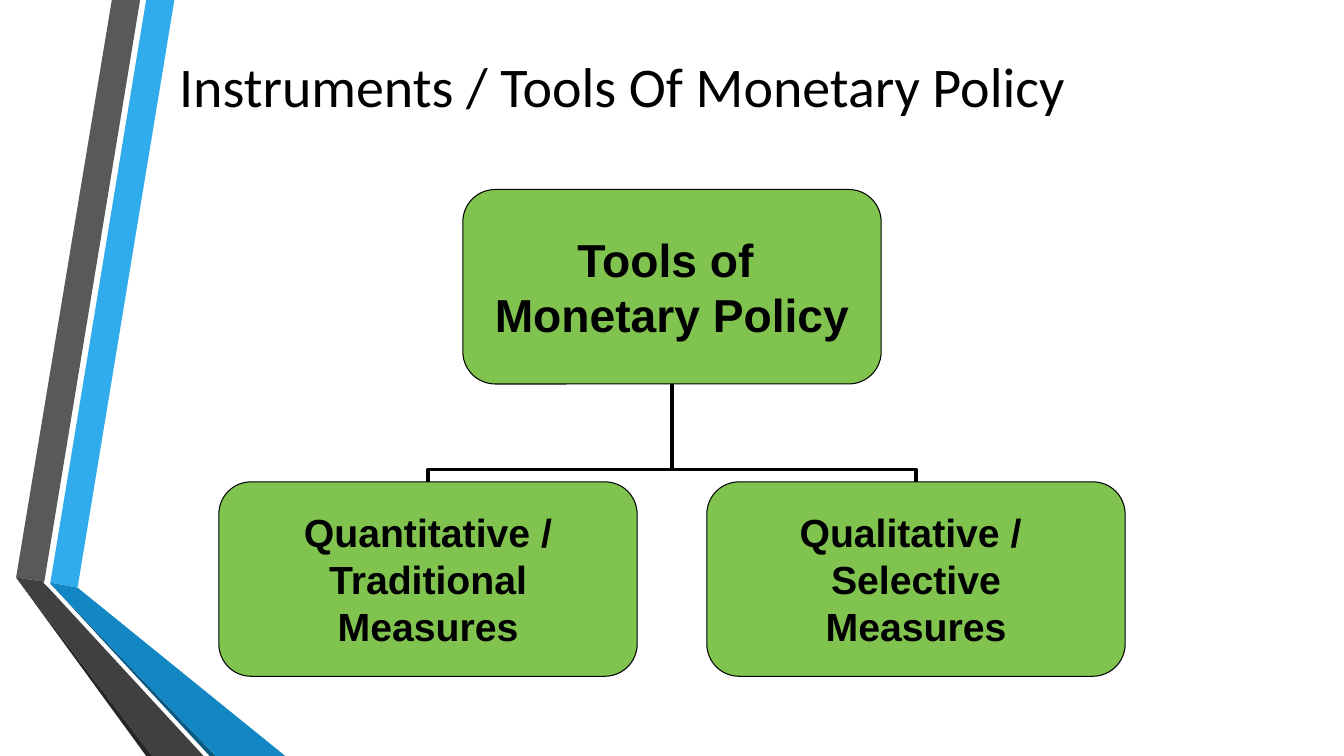
from pptx import Presentation
from pptx import util as u
from pptx.dml.color import RGBColor
from pptx.enum import shapes, text
from pptx.oxml.ns import qn
from lxml import etree

theme = {
    "ink": "000000", "box": "80C34F",
    "sky": "30ACEC", "blue": "1287C3", "navy": "0C5A82",
    "grey": "595959", "dark": "404040", "black": "262626",
    "title": 40, "root": 33, "leaf": 28,
    "head": "Calibri", "body": "Arial",
}


def paint(shape, color):
    shape.shadow.inherit = False
    shape.fill.solid()
    shape.fill.fore_color.rgb = RGBColor.from_string(theme[color])


def write(shape, lines, size, font, bold):
    frame = shape.text_frame
    frame.vertical_anchor = text.MSO_ANCHOR.MIDDLE
    frame.text = "\n".join(lines)
    for para in frame.paragraphs:
        para.alignment = text.PP_ALIGN.CENTER
        for run in para.runs:
            run.font.size = u.Pt(theme[size])
            run.font.name = theme[font]
            run.font.bold = bold
            run.font.color.rgb = RGBColor.from_string(theme["ink"])


deck = Presentation()
deck.slide_width, deck.slide_height = u.Inches(13.33), u.Inches(7.5)
slide = deck.slides.add_slide(deck.slide_layouts[6])
parts = slide.shapes

# Folded ribbons on the left, in hundredths of an inch
ribbons = [
    ("sky", [(50, 578), (77, 583), (173, 0), (145, 0)]),
    ("grey", [(139, 0), (111, 0), (16, 573), (44, 577)]),
    ("black", [(16, 573), (145, 750), (151, 750)]),
    ("navy", [(50, 579), (208, 750), (214, 750)]),
    ("blue", [(50, 579), (214, 750), (283, 750), (77, 583), (50, 578)]),
    ("dark", [(202, 750), (48, 583), (43, 578), (44, 577), (16, 573), (151, 750)]),
]
for color, points in ribbons:
    path = parts.build_freeform(*points[0], scale=u.Inches(0.01))
    path.add_line_segments(points[1:], close=True)
    ribbon = path.convert_to_shape()
    paint(ribbon, color)
    ribbon.line.fill.background()

# Title
title = parts.add_textbox(u.Inches(0.67), u.Inches(0.13), u.Inches(11), u.Inches(1.42))
title.text_frame.word_wrap = True
write(title, ["Instruments / Tools Of Monetary Policy"], "title", "head", False)

# Tree grid: the root is centred over two leaves
wide, high = 4.15, 1.93
mid, step = 6.665, 2.42
top, low = 1.88, 4.78
gap = low - top - high

# Elbows from each leaf up to the root: drawn lying down, then turned
for side, turn in ((1, 90), (-1, 270)):
    x, y = mid + side * step / 2, (top + high + low) / 2
    elbow = parts.add_connector(
        shapes.MSO_CONNECTOR.ELBOW,
        u.Inches(x + side * gap / 2), u.Inches(y - step / 2),
        u.Inches(x - side * gap / 2), u.Inches(y + step / 2))
    elbow.line.color.rgb = RGBColor.from_string(theme["ink"])
    elbow.line.width = u.Pt(2.25)
    props = elbow._element.spPr
    props.find(qn("a:xfrm")).set("rot", str(turn * 60000))
    bend = props.find(qn("a:prstGeom")).find(qn("a:avLst"))
    etree.SubElement(bend, qn("a:gd"), name="adj1", fmla="val 13000")
    etree.SubElement(props, qn("a:effectLst"))

# Boxes
boxes = [
    (0, top, "root", ["Tools of ", "Monetary Policy"]),
    (-1, low, "leaf", ["Quantitative /", "Traditional", "Measures"]),
    (1, low, "leaf", ["Qualitative / ", "Selective", "Measures"]),
]
for col, y, size, lines in boxes:
    box = parts.add_shape(
        shapes.MSO_SHAPE.ROUNDED_RECTANGLE,
        u.Inches(mid + col * step - wide / 2), u.Inches(y),
        u.Inches(wide), u.Inches(high))
    paint(box, "box")
    box.line.color.rgb = RGBColor.from_string(theme["ink"])
    box.line.width = u.Pt(0.75)
    frame = box.text_frame
    frame.word_wrap = False
    frame.margin_left = frame.margin_right = frame.margin_top = frame.margin_bottom = 0
    write(box, lines, size, "body", True)

deck.save("out.pptx")
